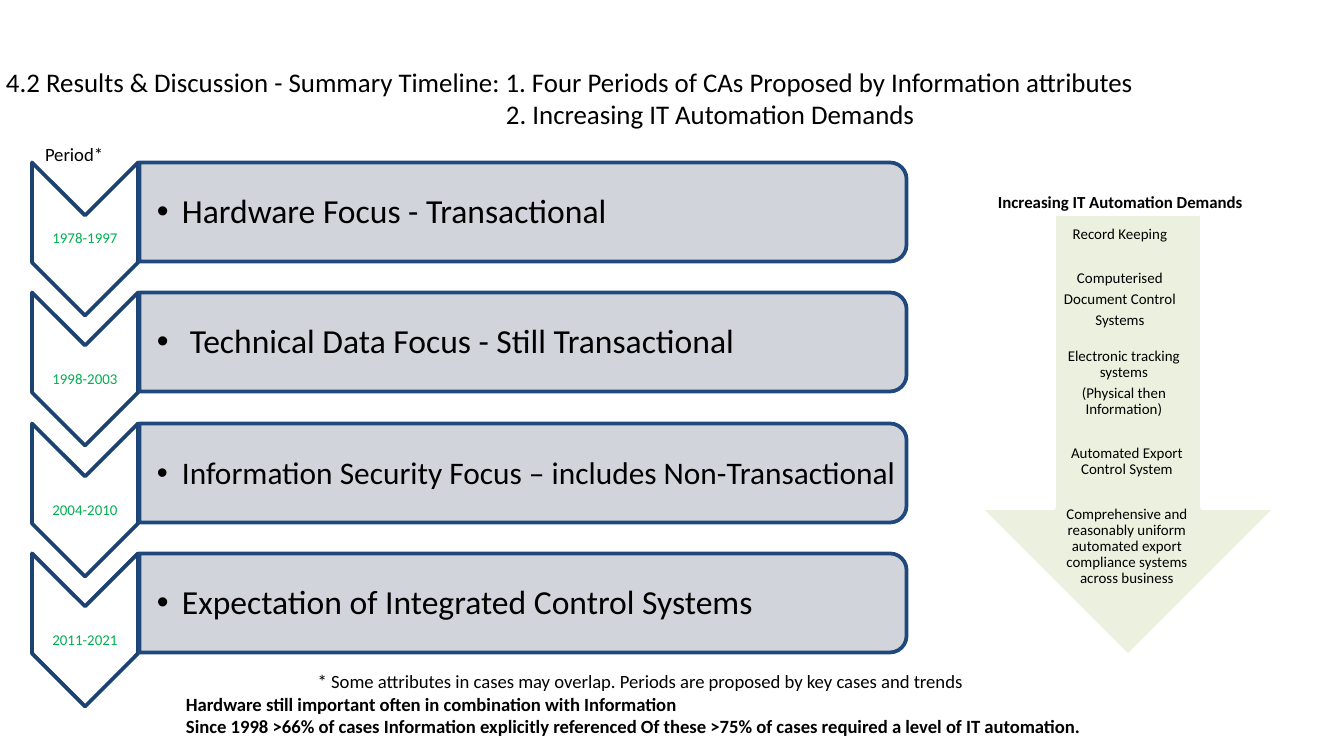
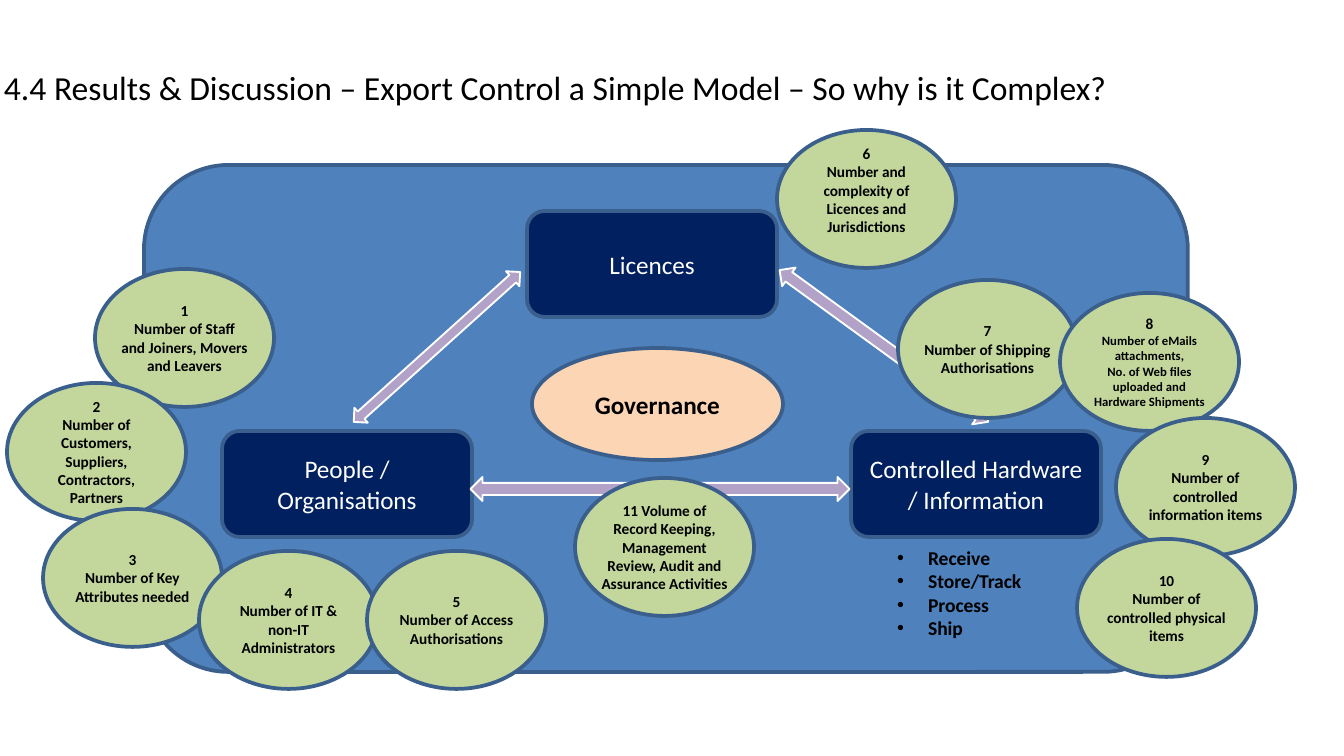
"""Build two slides on export control: a period timeline and a complexity model."""
from lxml.etree import SubElement
from pptx import Presentation
from pptx.dml.color import RGBColor
from pptx.enum.shapes import MSO_SHAPE as SHAPE
from pptx.enum.text import MSO_ANCHOR as ANCHOR, PP_ALIGN as ALIGN
from pptx.oxml.ns import qn
from pptx.util import Emu, Pt

FONT = "Calibri"
COLORS = {
    "black": "000000", "white": "FFFFFF", "year": "00B050",
    "chevron_edge": "1C4271", "bar": "CDD0D7", "bar_edge": "1F497D",
    "demand": "EBF1DE", "edge": "3A5F8C", "panel": "4F81BD",
    "node": "002060", "link": "B3A2C7", "governance": "FCD5B5",
    "bubble": "C3D69B",
}

TIMELINE_TITLE = [
    "4.2 Results & Discussion - Summary Timeline: 1. Four Periods of CAs "
    "Proposed by Information attributes",
    ("2. Increasing IT Automation Demands", {"indent": 500}),
]
PERIODS = [
    ("1978-1997", 0, "Hardware Focus - Transactional", 18, 25),
    ("1998-2003", 11, "Technical Data Focus - Still Transactional", 18, 33),
    ("2004-2010", 11, "Information Security Focus – includes Non-Transactional", 16.8, 25),
    ("2011-2021", 11, "Expectation of Integrated Control Systems", 18, 25),
]
FOOTNOTE = [
    ("* Some attributes in cases may overlap. Periods are proposed by key cases and trends",
     {"align": ALIGN.CENTER, "bold": False}),
    "Hardware still important often in combination with Information",
    "Since 1998 >66% of cases Information explicitly referenced "
    "Of these >75% of cases required a level of IT automation.",
]
WIDE_GAP = {"before": 15}
DEMANDS = [
    (1040, 227, 106, ["Record Keeping", ("Computerised", WIDE_GAP),
                      "Document Control", "Systems"]),
    (1044, 349, 74, ["Electronic tracking systems", "(Physical then Information)"]),
    (1047, 446, 144, ["Automated Export Control System",
                      ("Comprehensive and reasonably uniform automated export "
                       "compliance systems across business", WIDE_GAP)]),
]

MODEL_TITLE = ["4.4 Results & Discussion – Export Control a Simple Model – So why is it Complex?"]
NODES = [
    (222, 431, "People / Organisations"),
    (527, 211, "Licences"),
    (851, 431, "Controlled Hardware / Information"),
]
LINKS = [(437, 347, 224, 20, 318), (884, 346, 258, 23, 36), (660, 489, 379, 24, 0)]
HANDLING = ["Receive", "Store/Track", "Process", "Ship"]
SMALL = {"size": 6.8}
BUBBLES = [
    (95, 269, ["1", "Number of Staff and Joiners, Movers and Leavers"], 0),
    (7, 383, ["2", "Number of Customers, Suppliers,", "Contractors, Partners"], 0),
    (43, 509, ["3", "Number of Key Attributes needed"], 0),
    (199, 551, ["4", "Number of IT &", "non-IT Administrators"], 0),
    (367, 551, ["5", "Number of Access", "Authorisations"], 0),
    (777, 130, ["6", "Number and complexity of Licences and Jurisdictions"], 18),
    (575, 478, ["11 Volume of Record Keeping, Management Review, Audit and "
                "Assurance Activities"], 0),
    (898, 280, ["7", "Number of Shipping", "Authorisations"], 0),
    (1060, 293, ["8", ("Number of eMails attachments,", SMALL),
                 ("No. of Web files uploaded and Hardware Shipments", SMALL)], 0),
    (1116, 418, ["9", "Number of controlled information items"], 0),
    (1077, 539, ["10", "Number of controlled physical items"], 0),
]


def px(length):
    return Emu(round(length * 914400 / 134.4))


def rgb(name):
    return RGBColor.from_string(COLORS[name])


def add_line(paragraph, text, size, color="black", bold=False, align=ALIGN.LEFT,
             indent=0, bullet=False, spacing=None, before=0):
    paragraph.alignment = align
    if spacing:
        paragraph.line_spacing = spacing
    if before:
        paragraph.space_before = Pt(before)
    props = paragraph._p.get_or_add_pPr()
    if indent:
        props.set("marL", str(px(indent)))
    if bullet:
        props.set("indent", str(-px(indent)))
        SubElement(props, qn("a:buFont"), typeface="Arial")
        SubElement(props, qn("a:buChar"), char="•")
    run = paragraph.add_run()
    run.text = text
    font = run.font
    font.name, font.size, font.bold = FONT, Pt(size), bold
    font.color.rgb = rgb(color)


def write(shape, lines, anchor=ANCHOR.MIDDLE, insets=(13, 7, 13, 7), **style):
    frame = shape.text_frame
    frame.word_wrap = True
    frame.vertical_anchor = anchor
    (frame.margin_left, frame.margin_top,
     frame.margin_right, frame.margin_bottom) = map(px, insets)
    for index, line in enumerate(lines):
        text, changes = (line, {}) if isinstance(line, str) else line
        paragraph = frame.add_paragraph() if index else frame.paragraphs[0]
        merged = {**style, **changes}
        if not index:
            merged["before"] = 0
        add_line(paragraph, text, **merged)


def add_text(slide, box, lines, **style):
    write(slide.shapes.add_textbox(*map(px, box)), lines, **style)


def add_figure(slide, kind, box, fill, edge, weight=2, turn=0):
    figure = slide.shapes.add_shape(kind, *map(px, box))
    figure.shadow.inherit = False
    figure.fill.solid()
    figure.fill.fore_color.rgb = rgb(fill)
    figure.line.color.rgb = rgb(edge)
    figure.line.width = Pt(weight)
    figure.rotation = turn
    return figure


def centred(x, y, width, height):
    return x - width / 2, y - height / 2, width, height


def add_title(slide, box, lines, size):
    add_text(slide, box, lines, size=size)


def build_timeline(slide):
    add_title(slide, (-7, 35, 1197, 126), TIMELINE_TITLE, 14.4)
    for index, (years, drop, focus, size, indent) in enumerate(PERIODS):
        middle = 239 + round(index * 391 / 3)
        add_figure(slide, SHAPE.CHEVRON, centred(85, middle, 153, 106),
                   "white", "chevron_edge", turn=90)
        add_text(slide, centred(85, middle + drop, 106, 46), [years], insets=(1, 1, 1, 1),
                 size=8, color="year", align=ALIGN.CENTER, spacing=0.9)
        bar = add_figure(slide, SHAPE.ROUND_2_SAME_RECTANGLE,
                         centred(523, middle - 27, 99, 767), "bar", "bar_edge", turn=90)
        tint = bar._element.spPr.find(qn("a:solidFill"))[0]
        SubElement(tint, qn("a:alpha"), val="90000")
        add_text(slide, (138, middle - 71, 763, 90), [focus], insets=(19, 1, 1, 1),
                 size=size, indent=indent, bullet=True, spacing=0.9)
    add_text(slide, (32, 136, 112, 36), ["Period*"], anchor=ANCHOR.TOP, size=10)
    add_text(slide, (173, 663, 934, 93), FOOTNOTE, anchor=ANCHOR.TOP, size=10, bold=True)
    add_figure(slide, SHAPE.RIGHT_ARROW, centred(1128, 435, 442, 296),
               "demand", "white", turn=90)
    for left, top, height, steps in DEMANDS:
        add_text(slide, (left, top, 160, height), steps, anchor=ANCHOR.TOP,
                 insets=(0, 0, 0, 0), size=8, align=ALIGN.CENTER, spacing=0.9, before=2.6)
    add_text(slide, (985, 185, 305, 34), ["Increasing IT Automation Demands"],
             anchor=ANCHOR.TOP, size=9, bold=True)


def build_model(slide):
    add_title(slide, (-9, 24, 1224, 126), MODEL_TITLE, 18)
    add_figure(slide, SHAPE.ROUNDED_RECTANGLE, (144, 165, 1044, 507), "panel", "edge")
    for left, top, label in NODES:
        node = add_figure(slide, SHAPE.ROUNDED_RECTANGLE, (left, top, 250, 106), "node", "edge")
        write(node, [label], size=13.5, color="white", align=ALIGN.CENTER)
    for x, y, length, thickness, turn in LINKS:
        add_figure(slide, SHAPE.LEFT_RIGHT_ARROW, centred(x, y, length, thickness),
                   "link", "white", weight=1, turn=turn)
    add_text(slide, (884, 539, 192, 109), HANDLING, anchor=ANCHOR.TOP,
             size=10.5, bold=True, indent=31, bullet=True)
    governance = add_figure(slide, SHAPE.OVAL, (532, 348, 251, 112), "governance", "edge")
    write(governance, ["Governance"], size=13.5, bold=True, align=ALIGN.CENTER)
    for left, top, factor, lift in BUBBLES:
        bubble = add_figure(slide, SHAPE.OVAL, (left, top, 179, 138), "bubble", "edge")
        write(bubble, factor, insets=(0, 0, 0, lift), size=8.2, bold=True,
              align=ALIGN.CENTER)


def main():
    deck = Presentation()
    deck.slide_width, deck.slide_height = px(1344), px(756)
    for build in (build_timeline, build_model):
        build(deck.slides.add_slide(deck.slide_layouts[6]))
    deck.save("out.pptx")


if __name__ == "__main__":
    main()
